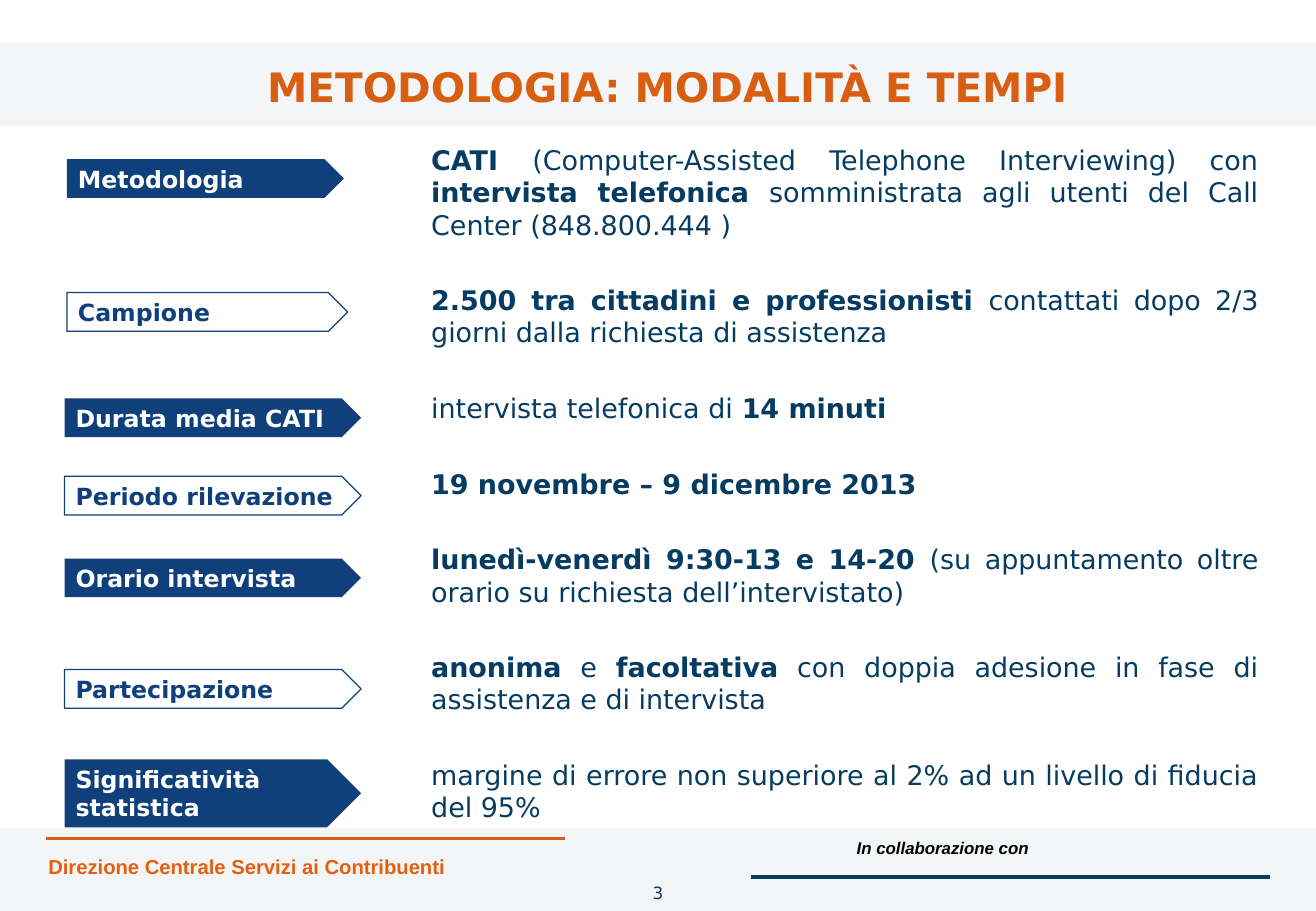
"""Build the survey methodology slide with its labels and details."""
from dataclasses import dataclass

from lxml import etree
from pptx import Presentation
from pptx.dml.color import RGBColor
from pptx.enum.shapes import MSO_CONNECTOR, MSO_SHAPE
from pptx.enum.text import MSO_ANCHOR, MSO_AUTO_SIZE, PP_ALIGN
from pptx.oxml.ns import qn
from pptx.slide import Slide
from pptx.text.text import TextFrame, _Paragraph
from pptx.util import Cm, Pt

LEFT, CENTER, RIGHT, JUSTIFY = PP_ALIGN.LEFT, PP_ALIGN.CENTER, PP_ALIGN.RIGHT, PP_ALIGN.JUSTIFY
TOP, MIDDLE = MSO_ANCHOR.TOP, MSO_ANCHOR.MIDDLE
FIXED = MSO_AUTO_SIZE.NONE
RECT, ARROW = MSO_SHAPE.RECTANGLE, MSO_SHAPE.PENTAGON
STRAIGHT = MSO_CONNECTOR.STRAIGHT


@dataclass(frozen=True)
class Theme:
    orange: str = "E3600F"
    navy: str = "073C62"
    blue: str = "0F407B"
    slate: str = "1E3D5C"
    white: str = "FFFFFF"
    black: str = "000000"
    sans: str = "DejaVu Sans"
    arial: str = "Arial"
    title: float = 24
    body: float = 16
    label: float = 14
    footer: float = 12
    small: float = 10
    pitch: float = 19.2
    gap: float = 25.6


THEME = Theme()


@dataclass(frozen=True)
class Box:
    left: float
    top: float
    width: float
    height: float

    def cm(self) -> tuple[Cm, Cm, Cm, Cm]:
        return Cm(self.left), Cm(self.top), Cm(self.width), Cm(self.height)


@dataclass(frozen=True)
class Style:
    size: float
    color: str
    font: str = THEME.sans
    bold: bool = True
    italic: bool = False


@dataclass(frozen=True)
class Rule:
    start: float
    end: float
    top: float
    color: str


@dataclass(frozen=True)
class Note:
    text: str
    box: Box
    style: Style
    align: PP_ALIGN


@dataclass(frozen=True)
class Label:
    text: str
    box: Box


@dataclass(frozen=True)
class Part:
    text: str
    bold: bool = False


RULES = (
    Rule(0.97, 11.81, 17.53, THEME.orange),
    Rule(15.7, 26.54, 18.34, THEME.navy),
)
BANDS = (Box(0, 17.32, 27.51, 1.73), Box(0, 0.91, 27.51, 1.73))
NOTES = (
    Note("In collaborazione con ", Box(16.64, 17.4, 5.21, 0.66),
         Style(THEME.small, THEME.black, THEME.arial, italic=True), RIGHT),
    Note("Direzione Centrale Servizi ai Contribuenti", Box(0.76, 17.73, 10.39, 0.76),
         Style(THEME.footer, THEME.orange, THEME.arial), LEFT),
    Note("3", Box(12.55, 18.34, 2.41, 0.99),
         Style(THEME.small, THEME.navy, bold=False), CENTER),
)
LABELS = (
    Label("Metodologia", Box(1.4, 3.33, 5.79, 0.81)),
    Label("Campione", Box(1.4, 6.12, 5.87, 0.81)),
    Label("Durata media CATI", Box(1.35, 8.33, 6.2, 0.81)),
    Label("Periodo rilevazione", Box(1.35, 9.96, 6.2, 0.81)),
    Label("Orario intervista", Box(1.35, 11.68, 6.2, 0.81)),
    Label("Partecipazione", Box(1.35, 14, 6.2, 0.81)),
    Label("Significatività statistica", Box(1.35, 15.88, 6.2, 1.42)),
)
DETAILS = (
    (Part("CATI ", True), Part("(Computer-Assisted Telephone Interviewing) con "),
     Part("intervista telefonica ", True),
     Part("somministrata agli utenti del Call Center (848.800.444 )")),
    (Part("2.500 tra cittadini e professionisti ", True),
     Part("contattati dopo 2/3 giorni dalla richiesta di assistenza")),
    (Part("intervista telefonica di "), Part("14 minuti", True)),
    (Part("19 novembre – 9 dicembre 2013", True),),
    (Part("lunedì-venerdì 9:30-13 e 14-20 ", True),
     Part("(su appuntamento oltre orario su richiesta dell’intervistato)")),
    (Part("anonima", True), Part(" e "), Part("facoltativa", True),
     Part(" con doppia adesione in fase di assistenza e di intervista")),
    (Part("margine di errore non superiore al 2% ad un livello di fiducia del 95%"),),
)


def rgb(code: str) -> RGBColor:
    return RGBColor.from_string(code)


def write(para: _Paragraph, text: str, style: Style) -> None:
    run = para.add_run()
    run.text = text
    font = run.font
    font.name, font.size = style.font, Pt(style.size)
    font.bold, font.italic = style.bold, style.italic
    font.color.rgb = rgb(style.color)


def setup(frame: TextFrame, anchor: MSO_ANCHOR) -> None:
    frame.word_wrap = True
    frame.auto_size = FIXED
    frame.vertical_anchor = anchor


def draw_rule(slide: Slide, rule: Rule) -> None:
    line = slide.shapes.add_connector(
        STRAIGHT, Cm(rule.start), Cm(rule.top), Cm(rule.end), Cm(rule.top))
    line.line.color.rgb = rgb(rule.color)
    line.line.width = Pt(2)
    etree.SubElement(line._element.spPr, qn("a:effectLst"))


def draw_band(slide: Slide, box: Box) -> None:
    band = slide.shapes.add_shape(RECT, *box.cm())
    band.shadow.inherit = False
    band.fill.solid()
    band.fill.fore_color.rgb = rgb(THEME.slate)
    band.line.fill.background()
    tint = band._element.spPr.find(f"{qn('a:solidFill')}/{qn('a:srgbClr')}")
    etree.SubElement(tint, qn("a:alpha"), val="5000")


def draw_note(slide: Slide, note: Note) -> None:
    frame = slide.shapes.add_textbox(*note.box.cm()).text_frame
    setup(frame, TOP)
    para = frame.paragraphs[0]
    para.alignment = note.align
    write(para, note.text, note.style)


def draw_label(slide: Slide, label: Label, solid: bool) -> None:
    arrow = slide.shapes.add_shape(ARROW, *label.box.cm())
    arrow.shadow.inherit = False
    arrow.fill.solid()
    arrow.fill.fore_color.rgb = rgb(THEME.blue if solid else THEME.white)
    if solid:
        arrow.line.fill.background()
    else:
        arrow.line.color.rgb = rgb(THEME.blue)
        arrow.line.width = Pt(0.75)
    frame = arrow.text_frame
    setup(frame, MIDDLE)
    frame.margin_left = frame.margin_right = Cm(0.23)
    frame.margin_top = frame.margin_bottom = Cm(0.1)
    para = frame.paragraphs[0]
    para.alignment = LEFT
    write(para, label.text, Style(THEME.label, THEME.white if solid else THEME.blue))


def fill_title(slide: Slide) -> None:
    title = slide.shapes.title
    title.left, title.top, title.width, title.height = Box(0.97, 0.91, 25.96, 1.8).cm()
    setup(title.text_frame, MIDDLE)
    para = title.text_frame.paragraphs[0]
    para.alignment = CENTER
    write(para, "METODOLOGIA: MODALITÀ E TEMPI", Style(THEME.title, THEME.orange))


def fill_body(slide: Slide) -> None:
    body = slide.placeholders[1]
    body.left, body.top, body.width, body.height = Box(8.76, 2.87, 17.81, 14.2).cm()
    frame = body.text_frame
    setup(frame, TOP)
    for index, parts in enumerate(DETAILS):
        para = frame.add_paragraph() if index else frame.paragraphs[0]
        props = para._p.get_or_add_pPr()
        props.set("marL", "0")
        props.set("indent", "0")
        etree.SubElement(props, qn("a:buNone"))
        para.alignment = JUSTIFY
        para.line_spacing = Pt(THEME.pitch)
        para.space_before = Pt(THEME.gap if index else 0)
        for part in parts:
            write(para, part.text, Style(THEME.body, THEME.navy, bold=part.bold))


def main() -> None:
    deck = Presentation()
    deck.slide_width, deck.slide_height = Cm(27.51), Cm(19.05)
    slide = deck.slides.add_slide(deck.slide_layouts[1])
    fill_title(slide)
    fill_body(slide)
    for rule in RULES:
        draw_rule(slide, rule)
    for box in BANDS:
        draw_band(slide, box)
    for note in NOTES:
        draw_note(slide, note)
    for index, label in enumerate(LABELS):
        draw_label(slide, label, index % 2 == 0)
    deck.save("out.pptx")


if __name__ == "__main__":
    main()
